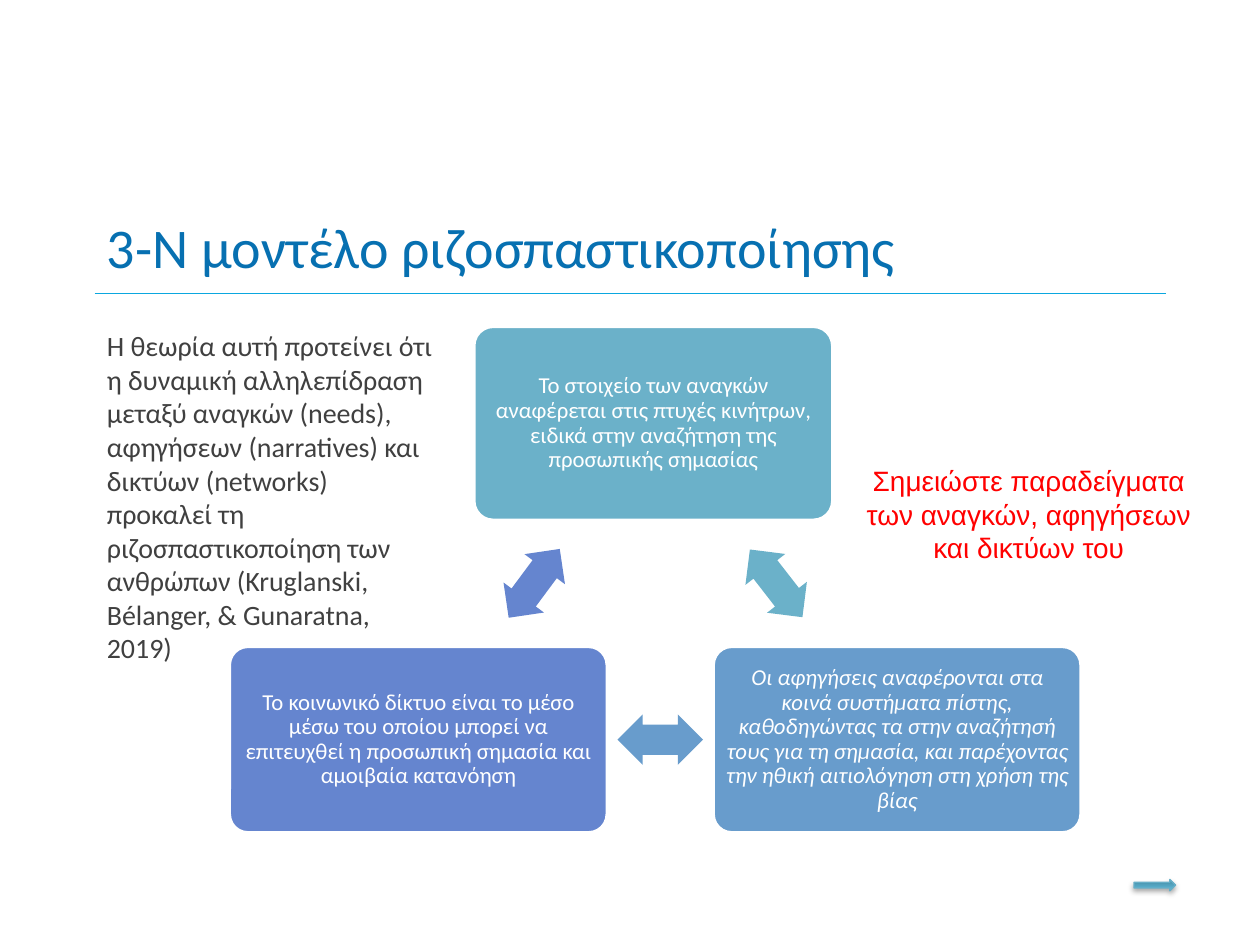
from dataclasses import dataclass

from lxml import etree
from pptx import Presentation
from pptx.dml.color import RGBColor
from pptx.enum.shapes import MSO_CONNECTOR, MSO_SHAPE
from pptx.enum.text import MSO_ANCHOR, PP_ALIGN
from pptx.oxml import parse_xml
from pptx.oxml.ns import nsdecls, qn
from pptx.util import Inches, Pt

ROUNDED = MSO_SHAPE.ROUNDED_RECTANGLE
DOUBLE_ARROW = MSO_SHAPE.LEFT_RIGHT_ARROW
RIGHT_ARROW = MSO_SHAPE.RIGHT_ARROW
STRAIGHT = MSO_CONNECTOR.STRAIGHT
LEFT, CENTER = PP_ALIGN.LEFT, PP_ALIGN.CENTER
TOP, MIDDLE = MSO_ANCHOR.TOP, MSO_ANCHOR.MIDDLE


@dataclass(frozen=True)
class Theme:
    font: str = "Calibri"
    prompt_font: str = "Arial"
    title: str = "0770B1"
    rule: str = "0BA7DF"
    body: str = "404040"
    prompt: str = "FF0000"
    white: str = "FFFFFF"
    needs: str = "6BB1C9"
    narratives: str = "689CCC"
    networks: str = "6585CF"
    next_dark: str = "4589A1"
    next_light: str = "5AB2D0"
    next_line: str = "66AEC7"
    title_size: int = 32
    body_size: int = 16
    card_size: int = 13


class SlideBuilder:
    def __init__(self, slide, theme):
        self.shapes = slide.shapes
        self.theme = theme

    def fill_text(self, frame, text, size, color, font=None, align=LEFT, anchor=TOP, italic=None):
        frame.word_wrap = True
        frame.vertical_anchor = anchor
        paragraph = frame.paragraphs[0]
        paragraph.alignment = align
        run = paragraph.add_run()
        run.text = text
        run.font.name = font or self.theme.font
        run.font.size = Pt(size)
        run.font.italic = italic
        run.font.color.rgb = RGBColor.from_string(color)
        return paragraph

    def text(self, box, text, size, color, **style):
        frame = self.shapes.add_textbox(*map(Inches, box)).text_frame
        self.fill_text(frame, text, size, color, **style)

    def shape(self, kind, box, color=None):
        shape = self.shapes.add_shape(kind, *map(Inches, box))
        shape.shadow.inherit = False
        if color:
            shape.fill.solid()
            shape.fill.fore_color.rgb = RGBColor.from_string(color)
        shape.line.fill.background()
        return shape

    def outline(self, shape, color, width):
        shape.line.color.rgb = RGBColor.from_string(color)
        shape.line.width = Pt(width)

    def card(self, box, color, text, italic=None):
        card = self.shape(ROUNDED, box, color)
        card.adjustments[0] = 0.1
        self.outline(card, self.theme.white, 2)
        frame = card.text_frame
        frame.margin_left = frame.margin_right = Inches(0.05)
        frame.margin_top = frame.margin_bottom = Inches(0.05)
        paragraph = self.fill_text(frame, text, self.theme.card_size, self.theme.white,
                                   align=CENTER, anchor=MIDDLE, italic=italic)
        paragraph.line_spacing = 0.9
        paragraph.space_after = Pt(4.5)

    def double_arrow(self, left, top, rotation, color):
        arrow = self.shape(DOUBLE_ARROW, (left, top, 0.68, 0.4), color)
        arrow.adjustments[0] = 0.6
        arrow.adjustments[1] = 0.5
        arrow.rotation = rotation

    def rule(self, left, right, y):
        rule = self.shapes.add_connector(
            STRAIGHT, Inches(left), Inches(y), Inches(right), Inches(y))
        self.outline(rule, self.theme.rule, 0.75)
        etree.SubElement(rule.element.spPr, qn("a:effectLst"))

    def next_arrow(self, box):
        arrow = self.shape(RIGHT_ARROW, box)
        arrow.element.spPr.xfrm.set("flipV", "1")
        arrow.fill.gradient()
        arrow.fill.gradient_angle = 90
        stops = zip(arrow.fill.gradient_stops,
                    (self.theme.next_dark, self.theme.next_light), (0, 0.8))
        for stop, color, position in stops:
            stop.color.rgb = RGBColor.from_string(color)
            stop.position = position
        self.outline(arrow, self.theme.next_line, 0.75)
        effects = arrow.element.spPr.find(qn("a:effectLst"))
        effects.append(parse_xml(
            f'<a:outerShdw {nsdecls("a")} blurRad="{Pt(3.1)}" dist="{Pt(1.8)}" '
            'dir="5400000" rotWithShape="0"><a:srgbClr val="000000">'
            '<a:alpha val="35000"/></a:srgbClr></a:outerShdw>'))


def main():
    presentation = Presentation()
    presentation.slide_width = Inches(10)
    presentation.slide_height = Inches(7.5)
    theme = Theme()
    slide = SlideBuilder(
        presentation.slides.add_slide(presentation.slide_layouts[6]), theme)

    slide.rule(0.75, 9.25, 2.33)

    slide.card((3.76, 2.59, 2.85, 1.54), theme.needs,
               "Το στοιχείο των αναγκών αναφέρεται στις πτυχές κινήτρων, ειδικά στην "
               "αναζήτηση της προσωπικής σημασίας")
    slide.double_arrow(5.82, 4.43, 52.2, theme.needs)
    slide.card((5.66, 5.13, 2.92, 1.48), theme.narratives,
               "Οι αφηγήσεις αναφέρονται στα κοινά συστήματα πίστης, καθοδηγώντας τα "
               "στην αναζήτησή τους για τη σημασία, και παρέχοντας την ηθική "
               "αιτιολόγηση στη χρήση της βίας", italic=True)
    slide.double_arrow(4.9, 5.67, 180, theme.narratives)
    slide.card((1.82, 5.13, 3, 1.48), theme.networks,
               "Το κοινωνικό δίκτυο είναι το μέσο μέσω του οποίου μπορεί να "
               "επιτευχθεί η προσωπική σημασία και αμοιβαία κατανόηση")
    slide.double_arrow(3.9, 4.43, 306.6, theme.networks)

    slide.text((0.75, 1.58, 8.5, 0.75), "3-N μοντέλο ριζοσπαστικοποίησης",
               theme.title_size, theme.title, anchor=MIDDLE)
    slide.text((0.75, 2.56, 2.83, 2.79),
               "Η θεωρία αυτή προτείνει ότι η δυναμική αλληλεπίδραση μεταξύ αναγκών "
               "(needs), αφηγήσεων (narratives) και δικτύων (networks) προκαλεί τη "
               "ριζοσπαστικοποίηση των ανθρώπων (Kruglanski, Bélanger, & Gunaratna, 2019)",
               theme.body_size, theme.body)
    slide.next_arrow((9, 6.98, 0.33, 0.09))
    slide.text((6.75, 3.63, 2.83, 0.91),
               "Σημειώστε παραδείγματα των αναγκών, αφηγήσεων και δικτύων του",
               theme.body_size, theme.prompt, font=theme.prompt_font, align=CENTER)

    presentation.save("out.pptx")


if __name__ == "__main__":
    main()
